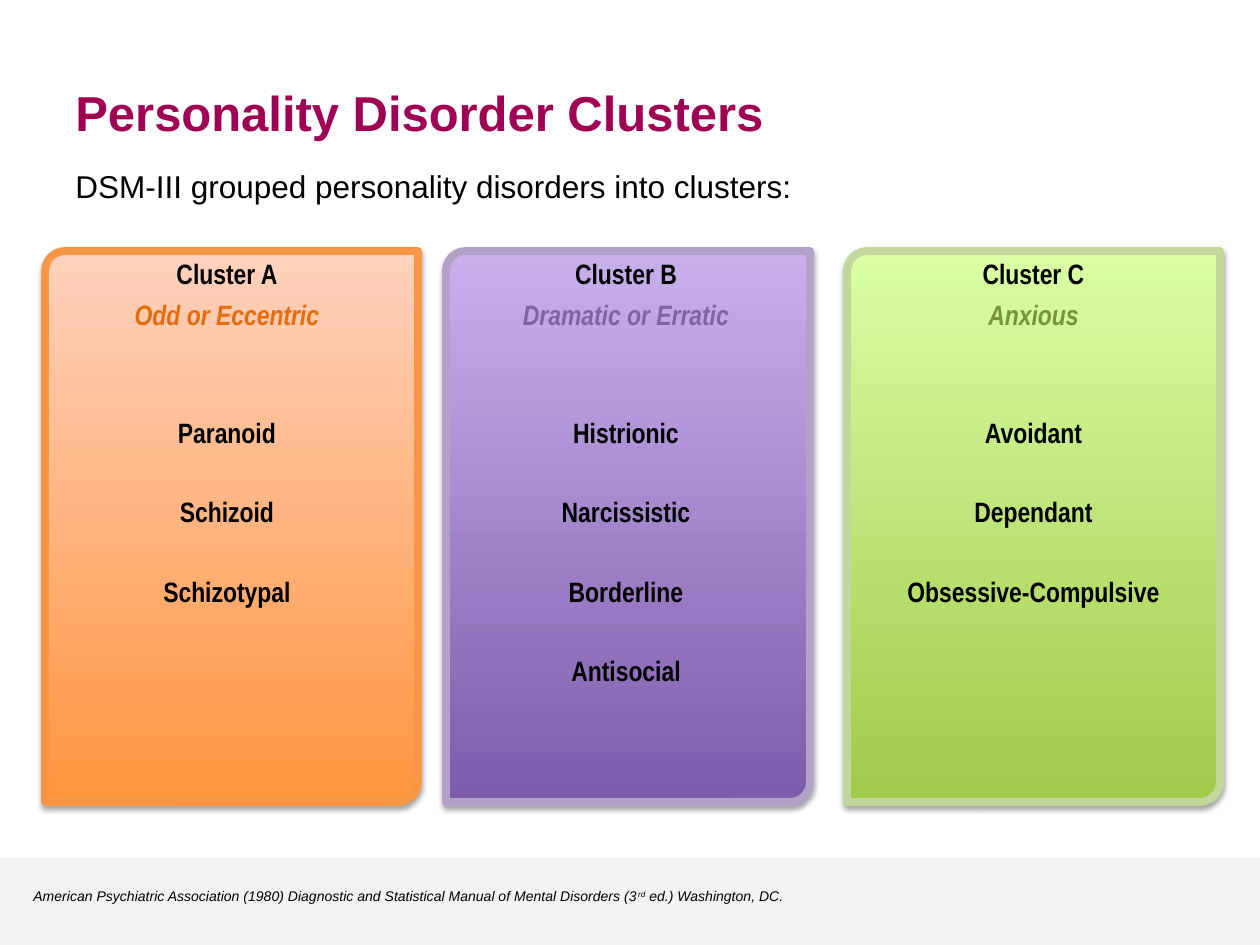
"""Build the slide of personality disorder clusters."""
from dataclasses import dataclass

from lxml import etree
from pptx import Presentation
from pptx.dml.color import RGBColor
from pptx.enum.shapes import MSO_SHAPE
from pptx.enum.text import PP_ALIGN
from pptx.oxml.ns import qn
from pptx.util import Emu, Pt

RECTANGLE = MSO_SHAPE.RECTANGLE
CARD_SHAPE = MSO_SHAPE.ROUND_2_DIAG_RECTANGLE
LEFT, CENTER = PP_ALIGN.LEFT, PP_ALIGN.CENTER
EMU_PER_PX = 914400 / 126


@dataclass(frozen=True)
class Theme:
    """Colours, fonts and type sizes in points."""
    text: str = "000000"
    title: str = "A00054"
    footer: str = "F2F2F2"
    body_font: str = "Arial"
    card_font: str = "Arial Narrow"
    title_size: int = 28
    intro_size: int = 18
    card_size: int = 16
    source_size: int = 8
    card_line: float = 4.5
    line_gap: float = 3.7
    line_pitch: float = 22.4


@dataclass(frozen=True)
class Cluster:
    """Content, colours and widths of one card."""
    name: str
    trait: str
    disorders: tuple
    bottom: str
    top: str
    border: str
    accent: str
    width: int
    text_width: int


CLUSTERS = (
    Cluster("Cluster A", "Odd or Eccentric", ("Paranoid", "Schizoid", "Schizotypal"),
            "FF953E", "FFD2BD", "F79646", "E46C0A", 373, 364),
    Cluster("Cluster B", "Dramatic or Erratic",
            ("Histrionic", "Narcissistic", "Borderline", "Antisocial"),
            "7F5BAB", "C8B0ED", "B3A2C7", "8064A2", 364, 360),
    Cluster("Cluster C", "Anxious", ("Avoidant", "Dependant", "Obsessive-Compulsive"),
            "A0CA4A", "DAFFA5", "C3D69B", "77933C", 373, 373),
)
CARD_LEFT, CARD_TOP, CARD_HEIGHT, CARD_PITCH = 45, 251, 551, 401


def px(*lengths):
    """Turn pixel lengths into EMU."""
    return [Emu(round(length * EMU_PER_PX)) for length in lengths]


class SlideBuilder:
    """Hold the theme and the current slide."""

    def __init__(self, slide, theme):
        """Keep the slide and its theme."""
        self.slide = slide
        self.theme = theme

    def band(self, left, top, width, height, color):
        """Add a plain filled rectangle."""
        shape = self.slide.shapes.add_shape(RECTANGLE, *px(left, top, width, height))
        shape.shadow.inherit = False
        shape.fill.solid()
        shape.fill.fore_color.rgb = RGBColor.from_string(color)
        shape.line.fill.background()

    def card(self, left, cluster):
        """Add a gradient card with a soft shadow."""
        shape = self.slide.shapes.add_shape(
            CARD_SHAPE, *px(left, CARD_TOP, cluster.width, CARD_HEIGHT))
        shape.adjustments[0] = 0.054
        shape.adjustments[1] = 0
        shape.fill.gradient()
        shape.fill.gradient_angle = 90
        stops = zip(shape.fill.gradient_stops, (0, 1), (cluster.bottom, cluster.top))
        for stop, position, color in stops:
            stop.position = position
            stop.color.rgb = RGBColor.from_string(color)
        shape.line.color.rgb = RGBColor.from_string(cluster.border)
        shape.line.width = Pt(self.theme.card_line)
        self.shadow(shape)

    def shadow(self, shape):
        """Give a shape a shadow that falls straight down."""
        shape.shadow.inherit = False
        effects = shape._element.spPr.find(qn("a:effectLst"))
        outer = etree.SubElement(effects, qn("a:outerShdw"), blurRad="40000",
                                 dist="23000", dir="5400000", rotWithShape="0")
        color = etree.SubElement(outer, qn("a:srgbClr"), val=self.theme.text)
        etree.SubElement(color, qn("a:alpha"), val="35000")

    def text_box(self, left, top, width, height, margin_top=6):
        """Add an empty wrapping text box and return its text frame."""
        shape = self.slide.shapes.add_textbox(*px(left, top, width, height))
        frame = shape.text_frame
        frame.word_wrap = True
        frame.margin_top = px(margin_top)[0]
        return frame

    def paragraph(self, frame, first=False, align=LEFT, space_before=0):
        """Return the first paragraph of a frame or a new one."""
        paragraph = frame.paragraphs[0] if first else frame.add_paragraph()
        paragraph.alignment = align
        paragraph.space_before = Pt(space_before)
        return paragraph

    def run(self, paragraph, text, size, color, font, bold=False, italic=False):
        """Add one styled run to a paragraph."""
        run = paragraph.add_run()
        run.text = text
        run.font.size = Pt(size)
        run.font.name = font
        run.font.bold = bold
        run.font.italic = italic
        run.font.color.rgb = RGBColor.from_string(color)
        return run

    def card_text(self, left, cluster):
        """Add the name, trait and disorders of a cluster."""
        theme = self.theme
        frame = self.text_box(left, CARD_TOP, cluster.text_width, CARD_HEIGHT)
        lines = [(cluster.name, theme.text, 0), (cluster.trait, cluster.accent, 0)]
        for index, disorder in enumerate(cluster.disorders):
            lines.append((disorder, theme.text, 1 if index else 2))
        for index, (text, color, skipped) in enumerate(lines):
            gap = theme.line_gap + skipped * theme.line_pitch if index else 0
            paragraph = self.paragraph(frame, index == 0, CENTER, gap)
            self.run(paragraph, text, theme.card_size, color, theme.card_font,
                     bold=True, italic=text == cluster.trait)

    def title(self, text):
        """Add the slide title."""
        theme = self.theme
        frame = self.text_box(63, 72, 1071, 93, margin_top=10)
        self.run(self.paragraph(frame, first=True), text, theme.title_size,
                 theme.title, theme.body_font, bold=True)

    def intro(self, text):
        """Add the line above the cards."""
        theme = self.theme
        frame = self.text_box(63, 161, 915, 50)
        self.run(self.paragraph(frame, first=True), text, theme.intro_size,
                 theme.text, theme.body_font)

    def source(self, parts):
        """Add the citation from pairs of text and baseline shift."""
        theme = self.theme
        frame = self.text_box(21, 882, 1053, 30)
        paragraph = self.paragraph(frame, first=True)
        for text, baseline in parts:
            run = self.run(paragraph, text, theme.source_size, theme.text,
                           theme.body_font, italic=True)
            if baseline:
                run._r.get_or_add_rPr().set("baseline", str(baseline * 1000))


def main():
    """Build and save the presentation."""
    presentation = Presentation()
    presentation.slide_width, presentation.slide_height = px(1260, 945)
    slide = presentation.slides.add_slide(presentation.slide_layouts[6])
    builder = SlideBuilder(slide, Theme())
    builder.band(0, 858, 1260, 87, builder.theme.footer)
    builder.title("Personality Disorder Clusters")
    builder.source((
        ("American Psychiatric Association (1980) Diagnostic and Statistical "
         "Manual of Mental Disorders (3", 0),
        ("rd", 30),
        (" ed.) Washington, DC.", 0),
    ))
    builder.intro("DSM-III grouped personality disorders into clusters:")
    for index, cluster in enumerate(CLUSTERS):
        left = CARD_LEFT + index * CARD_PITCH
        builder.card(left, cluster)
        builder.card_text(left, cluster)
    presentation.save("out.pptx")


if __name__ == "__main__":
    main()
